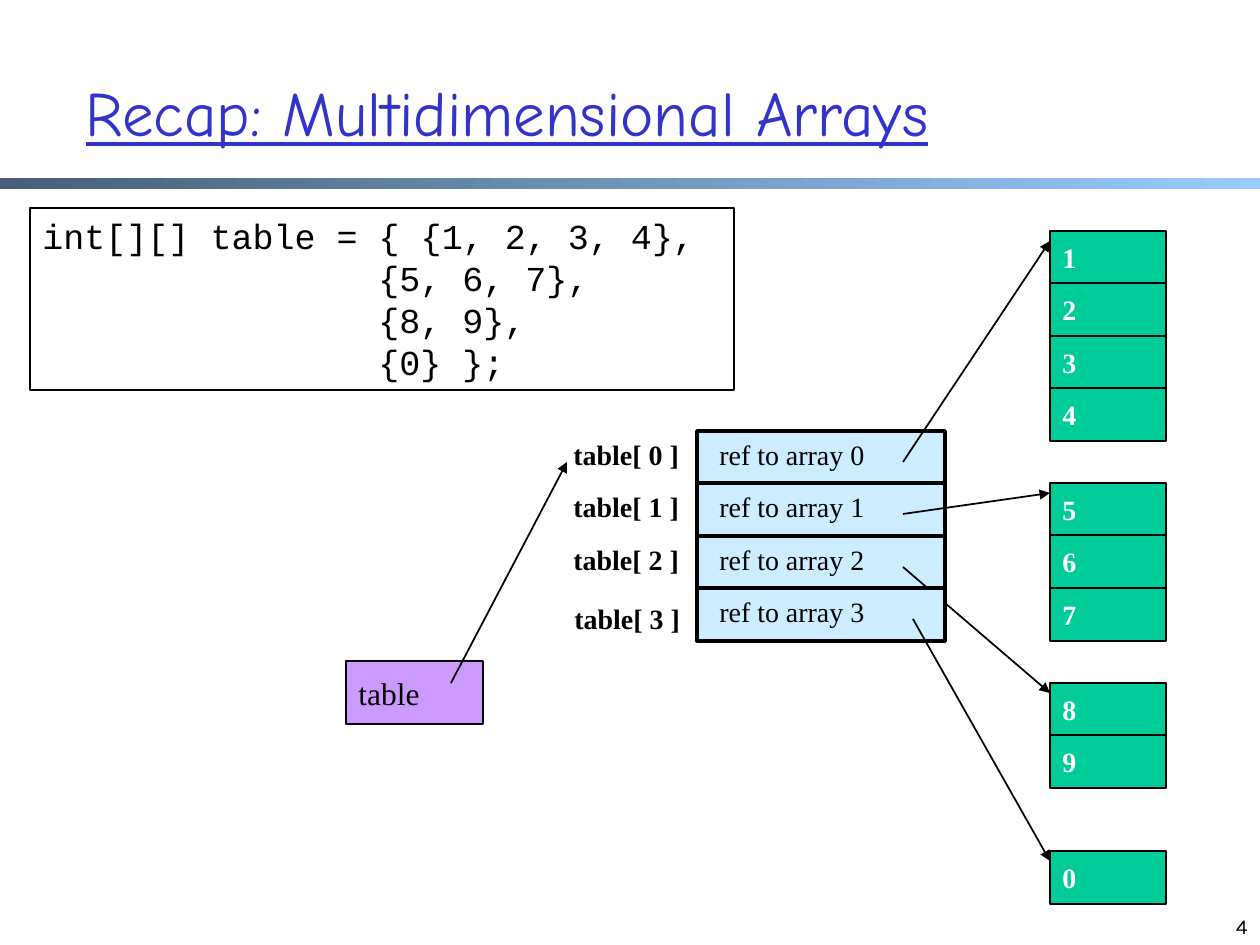
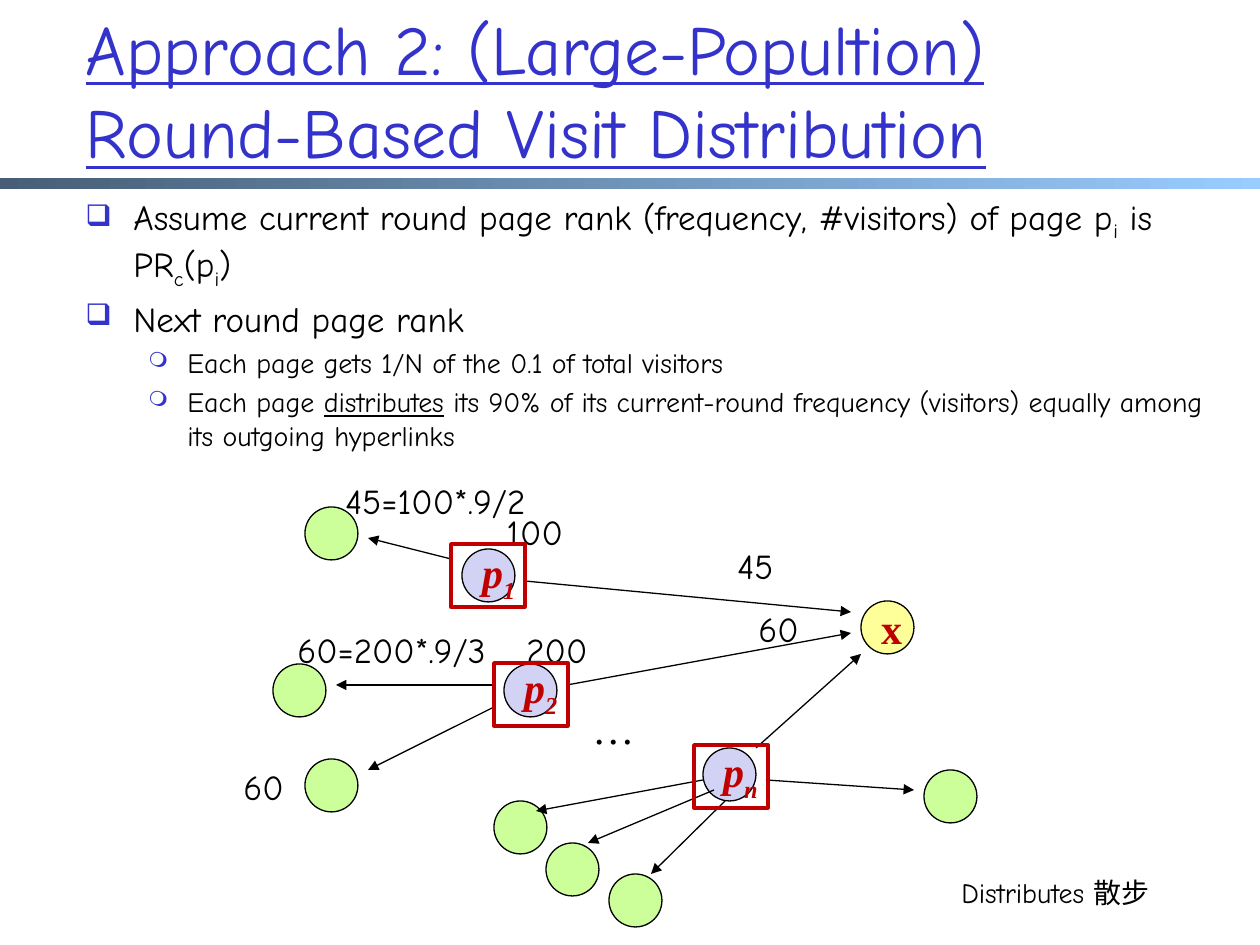
"""Builds two lecture slides: nested arrays and round-based page rank."""
from lxml import etree
from pptx import Presentation
from pptx.dml.color import RGBColor
from pptx.enum.shapes import MSO_CONNECTOR, MSO_SHAPE
from pptx.enum.text import MSO_ANCHOR, MSO_AUTO_SIZE, PP_ALIGN
from pptx.oxml.ns import qn
from pptx.util import Emu, Pt

RECT, OVAL = MSO_SHAPE.RECTANGLE, MSO_SHAPE.OVAL
STRAIGHT = MSO_CONNECTOR.STRAIGHT
TOP, MID, LOW = MSO_ANCHOR.TOP, MSO_ANCHOR.MIDDLE, MSO_ANCHOR.BOTTOM
FIT, FIXED = MSO_AUTO_SIZE.SHAPE_TO_FIT_TEXT, MSO_AUTO_SIZE.NONE
LEFT, RIGHT = PP_ALIGN.LEFT, PP_ALIGN.RIGHT

COMIC, SERIF, MONO, KARLA = "Comic Neue", "Times New Roman", "Courier New", "Karla"
BLACK, WHITE, BLUE, RED = "000000", "FFFFFF", "3333CC", "C00000"
SKY, GREEN, PLUM = "CCECFF", "00CC99", "CC99FF"
LIME, LILAC, YELLOW = "CCFF99", "D2D2F4", "FFFF99"
BAND = ("475E76", "99CCFF")
SCALE = 914400 / 126

CODE = [("int[][] table = { {1, 2, 3, 4},", 0), ("{5, 6, 7},", 336),
        ("{8, 9},", 336), ("{0} };", 336)]
ROWS = [
    {"vals": "1234", "top": 231, "tail": 903, "tag": (561, 431)},
    {"vals": "567", "top": 483, "tail": 903, "tag": (561, 483)},
    {"vals": "89", "top": 683, "tail": 903, "tag": (561, 536)},
    {"vals": "0", "top": 851, "tail": 913, "tag": (562, 595)},
]
CELL = 53
ROW_TOP = 431

POINTS = [
    (0, [("Assume current round page rank (frequency, #visitors) of page p", ""),
         ("i", "sub"), (" is PR", ""), ("c", "sub"), ("(p", ""), ("i", "sub"), (")", "")]),
    (0, [("Next round page rank", "")]),
    (1, [("Each page gets 1/N of the 0.1 of total visitors", "")]),
    (1, [("Each page ", ""), ("distributes", "line"),
         (" its 90% of its current-round frequency (visitors) equally among "
          "its outgoing hyperlinks", "")]),
]
LEVELS = [
    {"size": 20, "left": 48, "hang": 48, "mark": "❑", "pct": 85},
    {"size": 16, "left": 102, "hang": 39, "mark": "❍", "pct": 75},
]
PAGES = [("1", 462, 549, (451, 544)), ("2", 504, 664, (494, 663)),
         ("n", 703, 748, (694, 745))]
LINKS = [
    (525, 581, 851, 612), (567, 685, 851, 633), (756, 748, 861, 654),
    (451, 559, 368, 538), (494, 707, 368, 770), (494, 685, 336, 685),
    (766, 780, 914, 790), (703, 780, 536, 811), (714, 790, 588, 843),
    (725, 801, 651, 874),
]
LEAVES = [(305, 507), (273, 664), (305, 759), (924, 770), (494, 801),
          (546, 843), (609, 874)]
COUNTS = [("100", 494, 504, 84), ("45=100*.9/2", 333, 473, 234), ("45", 725, 538, 69),
          ("60=200*.9/3", 285, 622, 241), ("200", 514, 622, 91),
          ("60", 231, 759, 69), ("60", 746, 601, 69)]


def px(*nums):
    return [Emu(round(n * SCALE)) for n in nums]


def hue(code):
    return RGBColor.from_string(code)


def style(para, size, font, code=BLACK, bold=False, slant=False):
    for run in para.runs:
        run.font.size, run.font.name = Pt(size), font
        run.font.color.rgb = hue(code)
        run.font.bold, run.font.italic = bold, slant


def fill_runs(para, parts):
    for text, kind in parts:
        run = para.add_run()
        run.text = text
        if kind == "sub":
            run._r.get_or_add_rPr().set("baseline", "-25000")
        if kind == "line":
            run.font.underline = True


def shape(slide, kind, box, fill=None, line=BLACK, width=1):
    item = slide.shapes.add_shape(kind, *px(*box))
    item.shadow.inherit = False
    if fill:
        item.fill.solid()
        item.fill.fore_color.rgb = hue(fill)
    else:
        item.fill.background()
    item.line.color.rgb = hue(line)
    item.line.width = Pt(width)
    return item


def inside(item, parts, size, code, **look):
    frame = item.text_frame
    frame.word_wrap, frame.vertical_anchor = False, MID
    para = frame.paragraphs[0]
    para.alignment = LEFT
    fill_runs(para, parts)
    style(para, size, SERIF, code, **look)


def label(slide, text, box, size, font, wrap=False, bold=False):
    item = slide.shapes.add_textbox(*px(*box))
    frame = item.text_frame
    frame.text = text
    frame.word_wrap, frame.auto_size = wrap, FIT
    style(frame.paragraphs[0], size, font, bold=bold)
    return item


def arrow(slide, ends, width):
    link = slide.shapes.add_connector(STRAIGHT, *px(*ends))
    link.line.color.rgb = hue(BLACK)
    link.line.width = Pt(width)
    etree.SubElement(link.line._get_or_add_ln(), qn("a:tailEnd"), type="triangle")
    etree.SubElement(link._element.spPr, qn("a:effectLst"))


def start(deck, text, top, size):
    slide = deck.slides.add_slide(deck.slide_layouts[5])
    band = shape(slide, RECT, (0, 178, 1260, 11))
    band.line.fill.background()
    band.fill.gradient()
    band.fill.gradient_angle = 0
    for stop, code in zip(band.fill.gradient_stops, BAND):
        stop.color.rgb = hue(code)
    title = slide.shapes.title
    title.left, title.top, title.width, title.height = px(73, top, 1071, 158)
    frame = title.text_frame
    frame.text = text
    frame.word_wrap, frame.auto_size, frame.vertical_anchor = True, FIXED, MID
    para = frame.paragraphs[0]
    para.alignment = LEFT
    style(para, size, COMIC, BLUE)
    para.runs[0].font.underline = True
    return slide


def arrays(deck):
    slide = start(deck, "Recap: Multidimensional Arrays", 32, 36)
    code = shape(slide, RECT, (30, 208, 704, 182))
    frame = code.text_frame
    frame.text = "\n".join(text for text, _ in CODE)
    frame.word_wrap, frame.vertical_anchor = True, TOP
    for para, (_, left) in zip(frame.paragraphs, CODE):
        para.alignment = LEFT
        para._p.get_or_add_pPr().set("marL", str(px(left)[0]))
        style(para, 20, MONO)
    for i, row in enumerate(ROWS):
        step = i * 105 // 2
        top = ROW_TOP + step
        shape(slide, RECT, (697, top, 248, CELL), SKY, width=2)
        label(slide, f"ref to array {i}", (707, top, 221, 47), 16, SERIF, wrap=True)
        label(slide, f"table[ {i} ]", (*row["tag"], 131, 47), 16, SERIF, bold=True)
        for j, val in enumerate(row["vals"]):
            cell = shape(slide, RECT, (1050, row["top"] + j * 105 // 2, 116, CELL), GREEN)
            inside(cell, [(val, "")], 16, WHITE, bold=True)
        arrow(slide, (row["tail"], top + 31, 1050, row["top"] + 10), 1)
    root = shape(slide, RECT, (346, 661, 137, 63), PLUM)
    inside(root, [("table", "")], 18, BLACK)
    arrow(slide, (451, 683, 567, 462), 1)
    num = label(slide, "4", (966, 882, 294, 63), 12, KARLA, wrap=True)
    num.text_frame.auto_size = FIXED
    num.text_frame.vertical_anchor = LOW
    num.text_frame.paragraphs[0].alignment = RIGHT


def bullets(slide):
    frame = slide.shapes.add_textbox(*px(73, 189, 1155, 640)).text_frame
    frame.word_wrap = True
    for i, (depth, parts) in enumerate(POINTS):
        para = frame.add_paragraph() if i else frame.paragraphs[0]
        level = LEVELS[depth]
        fill_runs(para, parts)
        style(para, level["size"], COMIC)
        para.level = depth
        para.space_before = Pt(level["size"] * 0.2)
        left, hang = px(level["left"], -level["hang"])
        props = para._p.get_or_add_pPr()
        props.set("marL", str(left))
        props.set("indent", str(hang))
        tint = etree.SubElement(props, qn("a:buClr"))
        etree.SubElement(tint, qn("a:srgbClr"), val=BLUE)
        etree.SubElement(props, qn("a:buSzPct"), val=str(level["pct"] * 1000))
        etree.SubElement(props, qn("a:buChar"), char=level["mark"])


def ranks(deck):
    slide = start(deck, "Approach 2: (Large-Popultion) Round-Based Visit Distribution", 10, 40)
    bullets(slide)
    goal = shape(slide, OVAL, (861, 601, CELL, CELL), YELLOW, width=0.75)
    inside(goal, [("x", "")], 24, RED, bold=True)
    for sub, left, top, _ in PAGES:
        page = shape(slide, OVAL, (left, top, CELL, CELL), LILAC, width=0.75)
        inside(page, [("p", ""), (sub, "sub")], 24, RED, bold=True, slant=True)
    for spot in LEAVES:
        shape(slide, OVAL, (*spot, CELL, CELL), LIME, width=0.75)
    for ends in LINKS:
        arrow(slide, ends, 0.75)
    label(slide, "…", (580, 696, 68, 63), 24, SERIF)
    for text, left, top, wide in COUNTS:
        label(slide, text, (left, top, wide, 55), 20, COMIC)
    for *_, spot in PAGES:
        shape(slide, RECT, (*spot, 74, 63), line=RED, width=2)
    label(slide, "Distributes 散步", (949, 869, 242, 47), 16, COMIC, wrap=True)


def main():
    deck = Presentation()
    deck.slide_width, deck.slide_height = px(1260, 945)
    arrays(deck)
    ranks(deck)
    deck.save("out.pptx")


if __name__ == "__main__":
    main()
